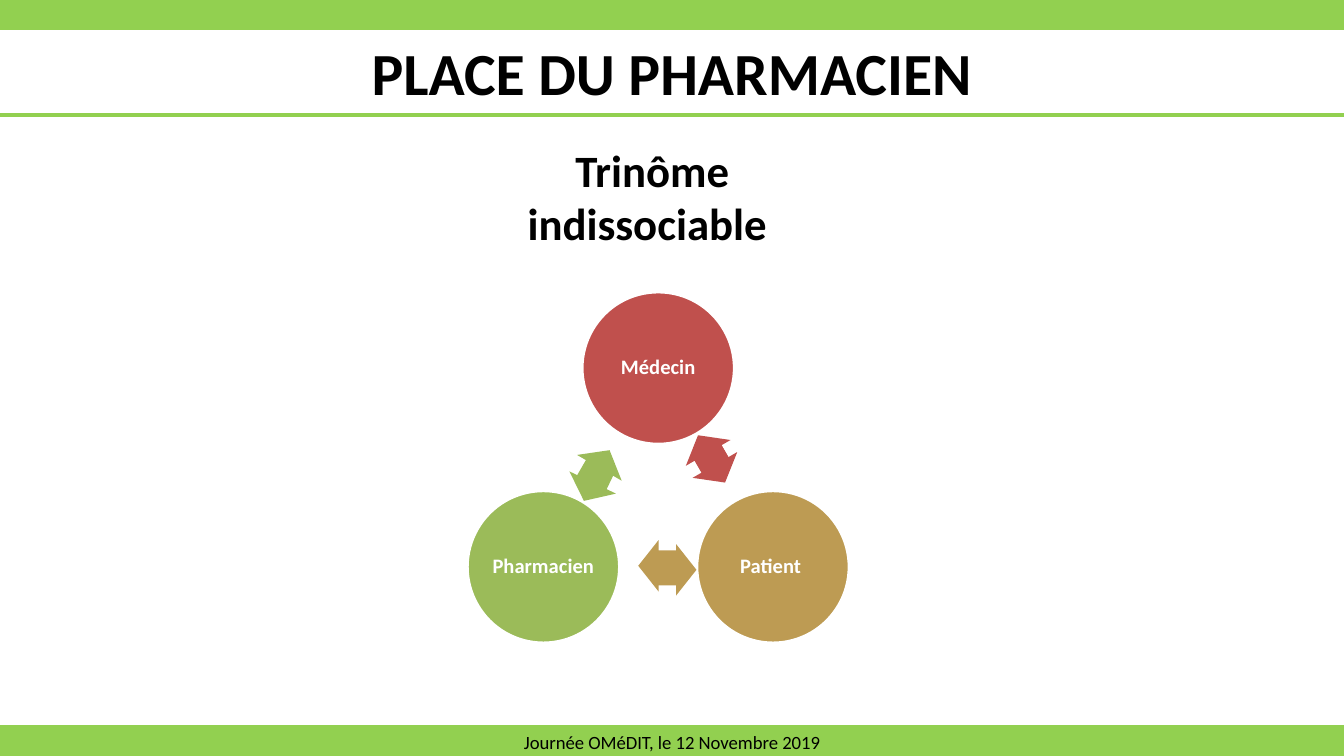
import math

from lxml import etree
from pptx import Presentation
from pptx.dml.color import RGBColor
from pptx.enum import shapes, text
from pptx.oxml.ns import qn
from pptx.util import Pt

WIDTH, HEIGHT = 720, 405
GREEN, BLACK, WHITE = "92D050", "000000", "FFFFFF"
RED, OLIVE, OCHRE = "C0504D", "9BBB59", "BD9B53"

TITLE = "PLACE DU PHARMACIEN"
SUBTITLE = "Trinôme indissociable "
FOOTER = "Journée OMéDIT, le 12 Novembre 2019"

# label, colour, direction from the triangle's centre in degrees
ACTORS = [("Médecin", RED, -90), ("Patient ", OCHRE, 30), ("Pharmacien", OLIVE, 150)]
CENTER_X, CENTER_Y, RADIUS, DIAMETER = 352.6, 268.2, 71, 82

# centre x, centre y, rotation, colour
ARROWS = [
    (383, 249.1, 60, RED), (352.8, 303.1, 180, OCHRE), (321.1, 250.6, 300, OLIVE),
    (317.5, 258.5, 115.5, OLIVE), (379.4, 242.6, 240, RED), (362.2, 305.3, 0, OCHRE),
]
ARROW_W, ARROW_H = 21.8, 27.6
BAR_H, RULE_Y = 15.3, 61.4


def color(value):
    return RGBColor.from_string(value)


def write(tf, content, size, ink, bold=False):
    tf.word_wrap = True
    p = tf.paragraphs[0]
    p.text = content
    p.alignment = text.PP_ALIGN.CENTER
    p.font.name, p.font.size, p.font.bold = "Calibri", Pt(size), bold
    p.font.color.rgb = color(ink)
    return p


def add_shape(kind, x, y, w, h, fill, line=None):
    sp = s.shapes.add_shape(kind, Pt(x), Pt(y), Pt(w), Pt(h))
    sp.shadow.inherit = False
    sp.fill.solid()
    sp.fill.fore_color.rgb = color(fill)
    if line:
        sp.line.color.rgb = color(line)
        sp.line.width = Pt(2)
    else:
        sp.line.fill.background()
    return sp


prs = Presentation()
prs.slide_width, prs.slide_height = Pt(WIDTH), Pt(HEIGHT)
s = prs.slides.add_slide(prs.slide_layouts[5])
KIND = shapes.MSO_SHAPE

title = s.shapes.title
title.left, title.top, title.width, title.height = Pt(0), Pt(BAR_H), Pt(WIDTH), Pt(46)
write(title.text_frame, TITLE, 32, BLACK, True)
title.text_frame.vertical_anchor = text.MSO_ANCHOR.TOP

footer, header = [add_shape(KIND.RECTANGLE, 0, y, WIDTH, BAR_H, GREEN, GREEN)
                  for y in (HEIGHT - BAR_H, 0)]
write(footer.text_frame, FOOTER, 10, BLACK)
footer.text_frame.vertical_anchor = text.MSO_ANCHOR.MIDDLE

rule = s.shapes.add_connector(shapes.MSO_CONNECTOR.STRAIGHT, Pt(0), Pt(RULE_Y), Pt(WIDTH), Pt(RULE_Y))
rule.line.color.rgb = color(GREEN)
rule.line.width = Pt(2.25)
etree.SubElement(rule._element.spPr, qn("a:effectLst"))

for label, fill, angle in ACTORS:
    x = CENTER_X + RADIUS * math.cos(math.radians(angle))
    y = CENTER_Y + RADIUS * math.sin(math.radians(angle))
    circle = add_shape(KIND.OVAL, x - DIAMETER / 2, y - DIAMETER / 2, DIAMETER, DIAMETER, fill, WHITE)
    tf = circle.text_frame
    tf.margin_left = tf.margin_right = tf.margin_top = tf.margin_bottom = Pt(1.1)
    tf.vertical_anchor = text.MSO_ANCHOR.MIDDLE
    write(tf, label, 11, WHITE, True).line_spacing = 0.9

for x, y, rotation, fill in ARROWS:
    arrow = add_shape(KIND.RIGHT_ARROW, x - ARROW_W / 2, y - ARROW_H / 2, ARROW_W, ARROW_H, fill)
    arrow.adjustments[0], arrow.adjustments[1] = 0.6, 0.5
    arrow.rotation = rotation

subtitle = s.shapes.add_textbox(Pt(275), Pt(72.7), Pt(149), Pt(65.5))
write(subtitle.text_frame, SUBTITLE, 24, BLACK, True)

prs.save("out.pptx")
